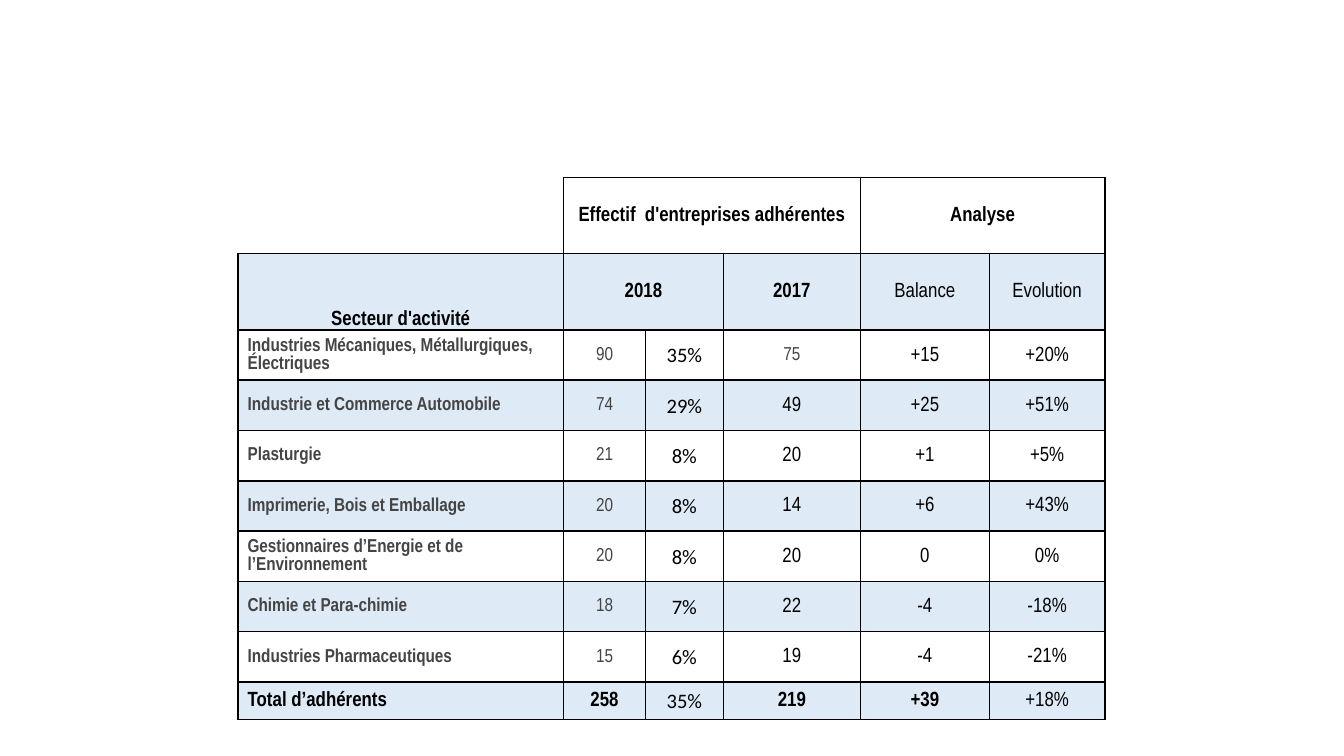
from dataclasses import dataclass, replace
from typing import Optional

import pptx
import pptx.dml.color
import pptx.enum.text
import pptx.oxml
import pptx.oxml.ns
import pptx.table
import pptx.util
from pptx.util import Cm

RGB = pptx.dml.color.RGBColor
ALIGN = pptx.enum.text.PP_ALIGN
ANCHOR = pptx.enum.text.MSO_ANCHOR


@dataclass(frozen=True)
class Theme:
    black: str = "000000"
    grey: str = "444444"
    white: str = "FFFFFF"
    band: str = "DEEAF6"
    narrow: str = "Arial Narrow"
    plain: str = "Calibri"
    normal: int = 11
    small: int = 10
    border: int = 1


THEME = Theme()


@dataclass(frozen=True)
class Style:
    font: str = THEME.narrow
    size: int = THEME.normal
    color: str = THEME.black
    bold: bool = False
    align: ALIGN = ALIGN.CENTER
    anchor: ANCHOR = ANCHOR.MIDDLE


FIGURE = Style()
HEADING = Style(bold=True)
SECTOR_HEADING = replace(HEADING, anchor=ANCHOR.BOTTOM)
SHARE = Style(font=THEME.plain)
COUNT = Style(size=THEME.small, color=THEME.grey)
SECTOR = replace(COUNT, bold=True, align=ALIGN.LEFT)
TOTAL_LABEL = replace(HEADING, align=ALIGN.LEFT)


@dataclass(frozen=True)
class Entry:
    text: str
    style: Style
    span: int = 1


@dataclass(frozen=True)
class Sector:
    name: str
    members_2018: str
    share: str
    members_2017: str
    balance: str
    evolution: str
    style_2017: Style = FIGURE

    def entries(self) -> list[Entry]:
        return [
            Entry(self.name, SECTOR),
            Entry(self.members_2018, COUNT),
            Entry(self.share, SHARE),
            Entry(self.members_2017, self.style_2017),
            Entry(self.balance, FIGURE),
            Entry(self.evolution, FIGURE),
        ]


SECTORS = [
    Sector("Industries Mécaniques, Métallurgiques, Électriques",
           "90", "35%", "75", "+15", "+20%", COUNT),
    Sector("Industrie et Commerce Automobile", "74", "29%", "49", "+25", "+51%"),
    Sector("Plasturgie", "21", "8%", "20", "+1", "+5%"),
    Sector("Imprimerie, Bois et Emballage", "20", "8%", "14", "+6", "+43%"),
    Sector("Gestionnaires d’Energie et de l’Environnement",
           "20", "8%", "20", "0", "0%"),
    Sector("Chimie et Para-chimie", "18", "7%", "22", "-4", "-18%"),
    Sector("Industries Pharmaceutiques", "15", "6%", "19", "-4", "-21%"),
]
GROUPS = [
    Entry("", HEADING),
    Entry("Effectif  d'entreprises adhérentes", HEADING, 3),
    Entry("Analyse", HEADING, 2),
]
HEADINGS = [
    Entry("Secteur d'activité", SECTOR_HEADING),
    Entry("2018", HEADING, 2),
    Entry("2017", HEADING),
    Entry("Balance", FIGURE),
    Entry("Evolution", FIGURE),
]
TOTALS = [
    Entry("Total d’adhérents", TOTAL_LABEL),
    Entry("258", HEADING),
    Entry("35%", SHARE),
    Entry("219", HEADING),
    Entry("+39", HEADING),
    Entry("+18%", FIGURE),
]
ROWS = [GROUPS, HEADINGS, *(sector.entries() for sector in SECTORS), TOTALS]
COLUMN_WIDTHS = [6.15, 1.55, 1.47, 2.59, 2.44, 2.18]
ROW_HEIGHTS = [1.44, 1.44, *[0.95] * len(SECTORS), 0.71]


def draw_borders(cell: pptx.table._Cell, sides: str) -> None:
    properties = cell._tc.get_or_add_tcPr()
    for side in sides:
        properties.append(pptx.oxml.parse_xml(
            f'<a:ln{side} {pptx.oxml.ns.nsdecls("a")} '
            f'w="{pptx.util.Pt(THEME.border)}">'
            f'<a:solidFill><a:srgbClr val="{THEME.black}"/></a:solidFill>'
            f'</a:ln{side}>'))


def fill_cell(cell: pptx.table._Cell, color: Optional[str]) -> None:
    if color is None:
        cell.fill.background()
    else:
        cell.fill.solid()
        cell.fill.fore_color.rgb = RGB.from_string(color)


def write_entry(cell: pptx.table._Cell, entry: Entry) -> None:
    style = entry.style
    cell.vertical_anchor = style.anchor
    cell.margin_left = cell.margin_right = Cm(0.18)
    cell.margin_top = cell.margin_bottom = Cm(0)
    if not entry.text:
        return
    paragraph = cell.text_frame.paragraphs[0]
    paragraph.alignment = style.align
    paragraph.line_spacing = 1.07
    run = paragraph.add_run()
    run.text = entry.text
    run.font.name = style.font
    run.font.size = pptx.util.Pt(style.size)
    run.font.bold = style.bold
    run.font.color.rgb = RGB.from_string(style.color)


def draw_row(table: pptx.table.Table, row: int, entries: list[Entry]) -> None:
    if row == 0:
        color = THEME.white
    else:
        color = THEME.band if row % 2 else None
    column = 0
    for entry in entries:
        last = column + entry.span - 1
        for position in range(column, last + 1):
            cell = table.cell(row, position)
            draw_borders(cell, "LRTB" if entry.text else "RB")
            fill_cell(cell, color)
        if entry.span > 1:
            table.cell(row, column).merge(table.cell(row, last))
        write_entry(table.cell(row, column), entry)
        column = last + 1


def main() -> None:
    presentation = pptx.Presentation()
    presentation.slide_width = Cm(25.4)
    presentation.slide_height = Cm(14.28)
    slide = presentation.slides.add_slide(presentation.slide_layouts[6])
    table = slide.shapes.add_table(
        len(ROWS), len(COLUMN_WIDTHS), Cm(4.5), Cm(3.35),
        Cm(sum(COLUMN_WIDTHS)), Cm(sum(ROW_HEIGHTS))).table
    table.first_row = False
    table.horz_banding = False
    for column, width in zip(table.columns, COLUMN_WIDTHS):
        column.width = Cm(width)
    for index, (height, entries) in enumerate(zip(ROW_HEIGHTS, ROWS)):
        table.rows[index].height = Cm(height)
        draw_row(table, index, entries)
    presentation.save("out.pptx")


if __name__ == "__main__":
    main()
